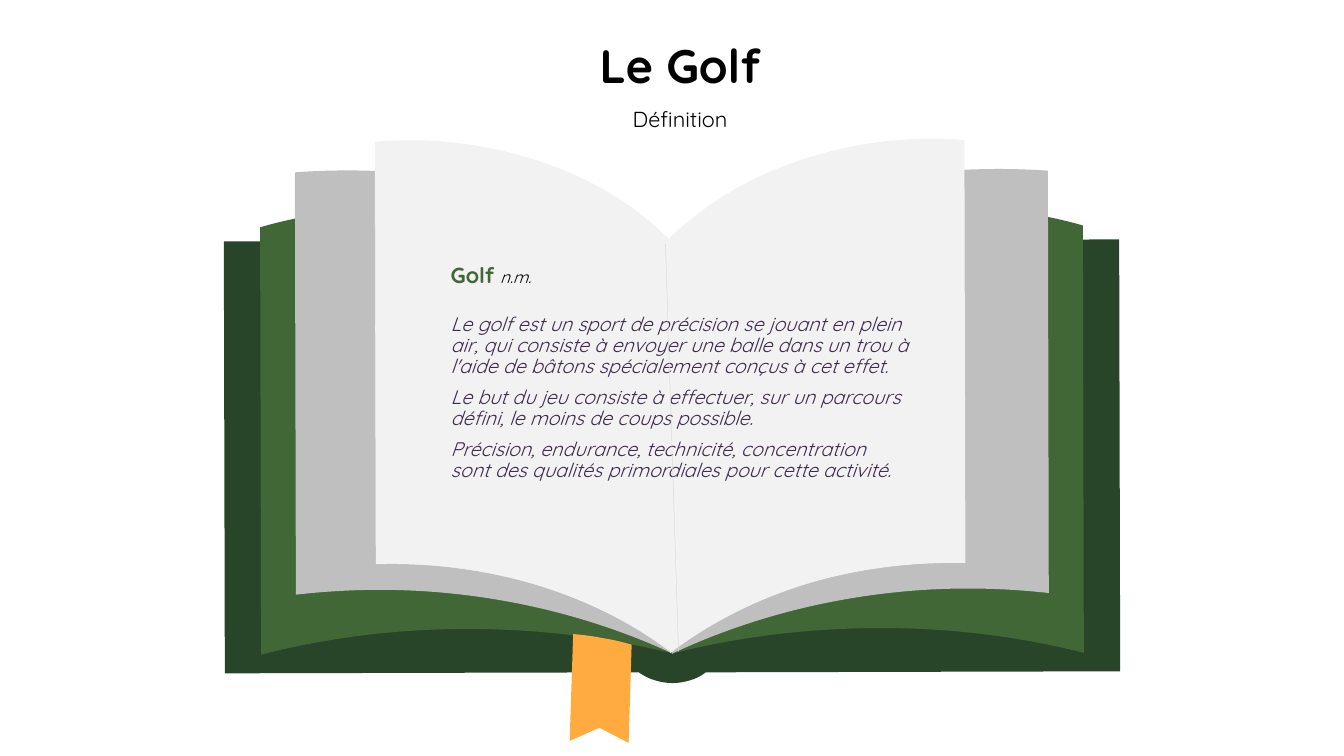
import pptx
import pptx.util
import pptx.dml.color
import pptx.enum.shapes
import pptx.enum.text
import pptx.oxml.ns
from lxml import etree

Inches = pptx.util.Inches
Pt = pptx.util.Pt
qn = pptx.oxml.ns.qn
FONT = "Quicksand"
DARK, GREEN, GREY, PAPER = "284529", "406735", "BFBFBF", "F2F2F2"
GOLD, PLUM, BLACK, CREASE = "FFAB40", "412A4F", "000000", "DBDBDB"
TILT = 0.0045

COVER = [(0.44, 2.79), (0.46, 11.36), (8.67, 11.34),
         (8.77, 11.41, 8.88, 11.47, 9, 11.5),
         (9.22, 11.57, 9.46, 11.57, 9.68, 11.5),
         (9.8, 11.47, 9.91, 11.41, 10, 11.34),
         (18.22, 11.32), (18.2, 2.75), (9.3, 2.78), (9.3, 2.79), (0.44, 2.79)]
LINING = [(4.84, 2.17), (3.6, 2.06, 2.34, 2.17, 1.16, 2.51), (1.18, 10.99),
          (2.5, 10.65, 3.88, 10.48, 5.27, 10.48),
          (6.65, 10.48, 8.03, 10.64, 9.36, 10.97),
          (9.34, 3.73), (8.08, 2.86, 6.51, 2.32, 4.84, 2.17)]
SHEET = [(5.54, 1.63), (4.33, 1.4, 3.09, 1.33, 1.85, 1.42), (1.87, 9.8),
         (2.91, 9.68, 3.96, 9.67, 4.99, 9.78),
         (6.53, 9.94, 8.01, 10.35, 9.35, 10.97),
         (9.33, 3.03), (8.19, 2.37, 6.9, 1.9, 5.54, 1.63)]
LEFT = [(6.8, 1.24), (5.74, 0.87, 4.59, 0.72, 3.44, 0.82), (3.46, 9.19),
        (4.43, 9.16, 5.4, 9.27, 6.32, 9.51),
        (7.45, 9.81, 8.48, 10.3, 9.34, 10.96),
        (9.32, 2.81), (8.66, 2.12, 7.79, 1.58, 6.8, 1.24)]
RIGHT = [(11.79, 1.22), (12.84, 0.85, 13.99, 0.7, 15.12, 0.79), (15.14, 9.16),
         (14.18, 9.14, 13.21, 9.25, 12.3, 9.49),
         (11.18, 9.79, 10.16, 10.29, 9.3, 10.94),
         (9.28, 2.74), (9.96, 2.08, 10.81, 1.56, 11.79, 1.22)]
RIBBON = [(7.37, 10.58), (7.3, 12.7), (7.89, 12.44), (8.47, 12.74), (8.53, 10.79),
          (8.34, 10.74, 8.15, 10.69, 7.95, 10.66),
          (7.76, 10.62, 7.57, 10.6, 7.37, 10.58)]


def color(code):
    """Turn a hex string into a colour."""
    return pptx.dml.color.RGBColor.from_string(code)


def pairs(step):
    """Split a step into its points."""
    return list(zip(step[::2], step[1::2]))


def mirror(path):
    """Reflect a path across the slightly tilted spine."""
    return [tuple(v for x, y in pairs(step)
                  for v in (18.63 + TILT * y - x, y - TILT * (9.33 - x)))
            for step in path]


def curve(shape, path):
    """Merge the three segments of each curved step into one Bezier."""
    lines = iter(list(shape._element.iter(qn("a:lnTo"))))
    for step in path[1:]:
        first = next(lines)
        if len(step) == 6:
            bend = etree.Element(qn("a:cubicBezTo"))
            first.addprevious(bend)
            for line in (first, next(lines), next(lines)):
                bend.append(line[0])
                line.getparent().remove(line)


def leaf(slide, left, top, path, fill, edge=0):
    """Draw one closed outline of straight and curved steps at an offset."""
    points = [(Inches(left + x), Inches(top + y)) for step in path for x, y in pairs(step)]
    build = slide.shapes.build_freeform(*points[0], scale=1.0)
    build.add_line_segments(points[1:], close=True)
    shape = build.convert_to_shape()
    curve(shape, path)
    shape.shadow.inherit = False
    shape.fill.solid()
    shape.fill.fore_color.rgb = color(fill)
    if edge:
        shape.line.color.rgb = color(fill)
        shape.line.width = Pt(edge)
    else:
        shape.line.fill.background()


def book(slide, left, top):
    """Draw the open book with its ribbon."""
    leaf(slide, left, top, COVER, DARK)
    for turn, front, edge in ((list, LEFT, 0.75), (mirror, RIGHT, 1.5)):
        leaf(slide, left, top, turn(LINING), GREEN)
        leaf(slide, left, top, turn(SHEET), GREY)
        leaf(slide, left, top, front, PAPER, edge)
    leaf(slide, left, top, RIBBON, GOLD)


def crease(slide, left, top, width, height):
    """Draw the thin fold between the pages."""
    line = slide.shapes.add_connector(
        pptx.enum.shapes.MSO_CONNECTOR.STRAIGHT, Inches(left + width),
        Inches(top + height), Inches(left), Inches(top))
    line.line.color.rgb = color(CREASE)
    line.line.width = Pt(0.75)
    etree.SubElement(line._element.spPr, qn("a:effectLst"))


def frame(slide, left, top, width, height, pad=(0.1, 0.05, 0.1, 0.05)):
    """Add an empty wrapping text box."""
    box = slide.shapes.add_textbox(*map(Inches, (left, top, width, height)))
    text = box.text_frame
    text.word_wrap = True
    text.margin_left, text.margin_top, text.margin_right, text.margin_bottom = map(Inches, pad)
    return text


def write(para, text, size=28, hue=BLACK, bold=False, italic=False):
    """Add a formatted run to a paragraph."""
    run = para.add_run()
    run.text = text
    font = run.font
    font.name, font.size, font.bold, font.italic = FONT, Pt(size), bold, italic
    font.color.rgb = color(hue)


def heading(slide, left, top, width):
    """Place the centred title and subtitle."""
    title = frame(slide, left, top, width, 1.11).paragraphs[0]
    write(title, "Le Golf", size=67, bold=True)
    label = frame(slide, left + 4.14, top + 1.27, 2.96, 0.5).paragraphs[0]
    label.line_spacing = 1.2
    write(label, "Définition", size=31)
    for para in (title, label):
        para.alignment = pptx.enum.text.PP_ALIGN.CENTER


def entry(slide, left, top, width, height):
    """Place the dictionary entry on the pages."""
    text = frame(slide, left, top, width, height, (0.2, 0.1, 0.2, 0.52))
    text.vertical_anchor = pptx.enum.text.MSO_ANCHOR.MIDDLE
    head = text.paragraphs[0]
    head.space_after = Pt(37.5)
    write(head, "Golf ", size=31, hue=GREEN, bold=True)
    write(head, "n.m.", size=24, italic=True)
    parts = (
        "Le golf est un sport de précision se jouant en plein air, qui consiste à "
        "envoyer une balle dans un trou à l'aide de bâtons spécialement conçus à cet effet.",
        "Le but du jeu consiste à effectuer, sur un parcours défini, "
        "le moins de coups possible.",
        "Précision, endurance, technicité, concentration sont des qualités "
        "primordiales pour cette activité.")
    for i, part in enumerate(parts):
        para = text.add_paragraph()
        para.line_spacing = 0.9
        para.space_before = Pt(13.5 if i else 0)
        write(para, part, hue=PLUM, italic=True)


def main():
    """Build and save the slide."""
    deck = pptx.Presentation()
    deck.slide_width, deck.slide_height = Inches(26.66), Inches(15)
    slide = deck.slides.add_slide(deck.slide_layouts[6])
    book(slide, 4, 2)
    entry(slide, 8.74, 4.63, 9.5, 5.92)
    heading(slide, 7.87, 0.67, 11.23)
    crease(slide, 13.2, 4.84, 0.26, 8.09)
    deck.save("out.pptx")


if __name__ == "__main__":
    main()
